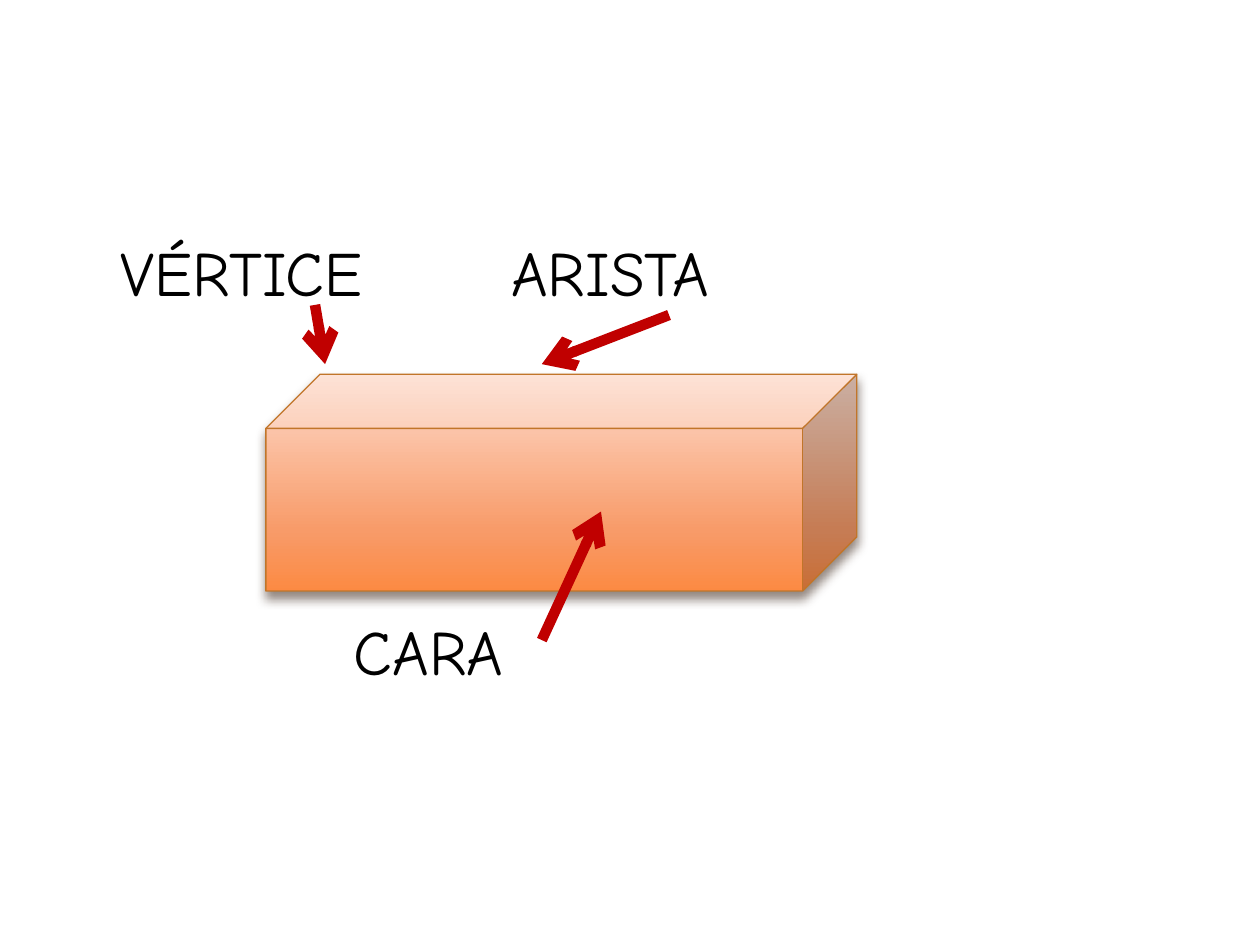
from copy import deepcopy

from pptx import Presentation
from pptx import util as u
from pptx.dml.color import RGBColor
from pptx.enum import shapes, text
from pptx.oxml import ns, parse_xml

COLORS = {
    "text": "000000",
    "arrow": "C00000",
    "edge": "C17529",
    "shadow": "4E3B30",
    "light": "FDDBCC",
    "middle": "F89B69",
    "dark": "FC8A43",
}
FONT = "Comic Neue"


def color(name):
    return RGBColor.from_string(COLORS[name])


def set_gradient(fill, stops, angle):
    """Fill with (position, color name) stops."""
    fill.gradient()
    fill.gradient_angle = angle
    first = fill.gradient_stops[0]
    stop_list = first._gs.getparent()
    template = deepcopy(first._gs)
    while len(stop_list) < len(stops):
        stop_list.append(deepcopy(template))
    for stop, (position, name) in zip(fill.gradient_stops, stops):
        stop.position = position
        stop.color.rgb = color(name)


def add_shadow(shape, name, opacity, blur, distance):
    """Cast a soft shadow straight down."""
    shape.shadow.inherit = False
    effects = shape._element.spPr.find(ns.qn("a:effectLst"))
    effects.append(parse_xml(
        f'<a:outerShdw {ns.nsdecls("a")} blurRad="{u.Pt(blur)}" '
        f'dist="{u.Pt(distance)}" dir="5400000" algn="ctr" rotWithShape="0">'
        f'<a:srgbClr val="{COLORS[name]}"><a:alpha val="{opacity * 1000}"/>'
        '</a:srgbClr></a:outerShdw>'))


def add_prism(slide, left, top, width, height):
    prism = slide.shapes.add_shape(
        shapes.MSO_SHAPE.CUBE, u.Inches(left), u.Inches(top),
        u.Inches(width), u.Inches(height))
    set_gradient(prism.fill, [(0, "light"), (0.72, "middle"), (1, "dark")], 270)
    prism.line.color.rgb = color("edge")
    prism.line.width = u.Pt(0.79)
    add_shadow(prism, "shadow", opacity=60, blur=6, distance=4)


def add_label(slide, wording, left, top, width, height=0.71, size=36, name="text"):
    box = slide.shapes.add_textbox(
        u.Inches(left), u.Inches(top), u.Inches(width), u.Inches(height))
    frame = box.text_frame
    frame.word_wrap = True
    frame.auto_size = text.MSO_AUTO_SIZE.SHAPE_TO_FIT_TEXT
    run = frame.paragraphs[0].add_run()
    run.text = wording
    run.font.name = FONT
    run.font.size = u.Pt(size)
    run.font.color.rgb = color(name)


def add_arrow(slide, start, end, width=6):
    points = [u.Inches(value) for value in (*start, *end)]
    arrow = slide.shapes.add_connector(shapes.MSO_CONNECTOR.STRAIGHT, *points)
    arrow.line.color.rgb = color("arrow")
    arrow.line.width = u.Pt(width)
    arrow.line._get_or_add_ln().append(
        parse_xml(f'<a:tailEnd {ns.nsdecls("a")} type="arrow"/>'))
    arrow._element.spPr.append(
        parse_xml(f'<a:effectLst {ns.nsdecls("a")}/>'))


def main():
    presentation = Presentation()
    presentation.slide_width = u.Inches(10)
    presentation.slide_height = u.Inches(7.5)
    slide = presentation.slides.add_slide(presentation.slide_layouts[6])

    # Rectangular prism
    add_prism(slide, 2.11, 2.97, 4.69, 1.72)

    # Names of its parts
    add_label(slide, "VÉRTICE", 0.86, 1.8, 2.6)
    add_label(slide, "ARISTA", 3.96, 1.8, 2.2)
    add_label(slide, "CARA", 2.71, 4.81, 1.6)

    # Arrows from the names to the parts
    add_arrow(slide, (2.5, 2.42), (2.58, 2.89))
    add_arrow(slide, (5.31, 2.5), (4.3, 2.89))
    add_arrow(slide, (4.3, 5.08), (4.77, 4.06))

    presentation.save("out.pptx")


if __name__ == "__main__":
    main()
